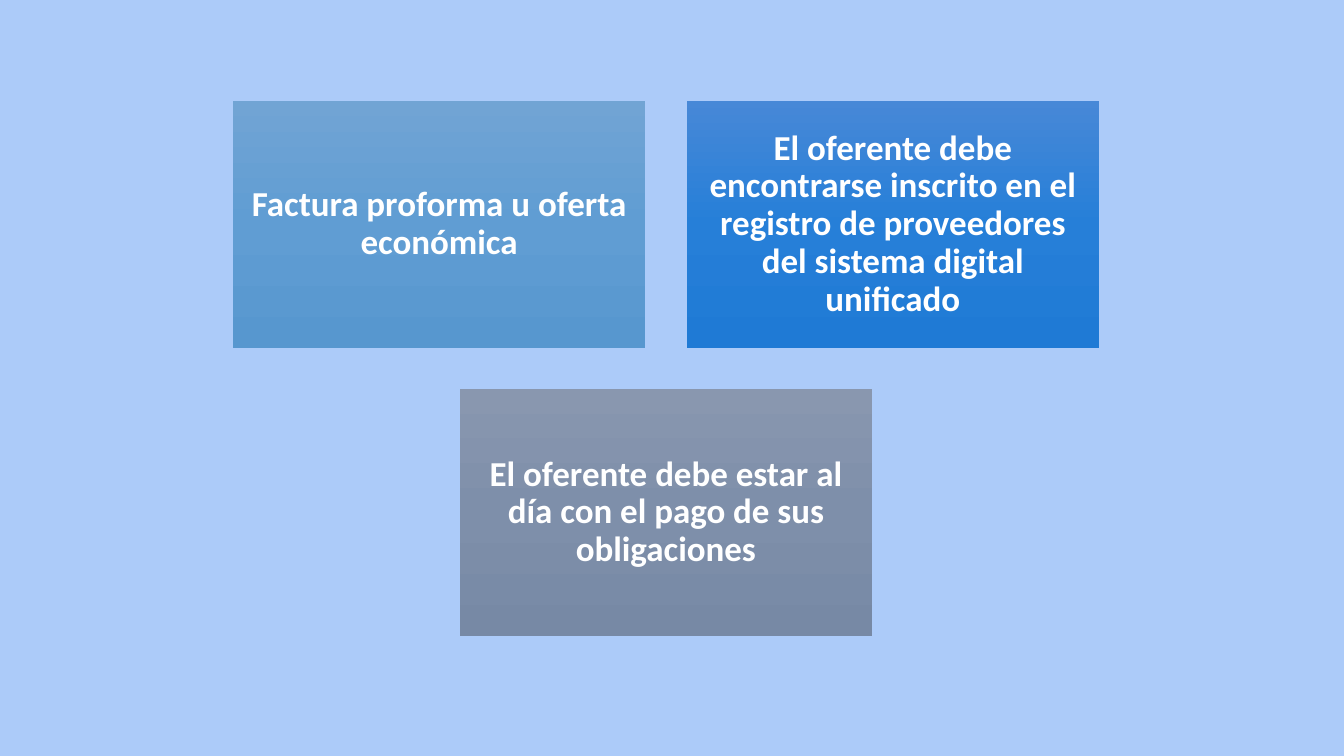
from copy import deepcopy

from pptx import Presentation
from pptx.dml.color import RGBColor
from pptx.enum.shapes import MSO_SHAPE
from pptx.enum.text import MSO_ANCHOR, PP_ALIGN
from pptx.oxml.ns import qn
from pptx.util import Inches, Pt

BACKGROUND = RGBColor(0xAC, 0xCB, 0xF9)
WHITE = RGBColor(0xFF, 0xFF, 0xFF)
LIGHT_BLUE = [RGBColor(0x71, 0xA4, 0xD4), RGBColor(0x60, 0x9D, 0xD3), RGBColor(0x57, 0x97, 0xCF)]
STRONG_BLUE = [RGBColor(0x47, 0x88, 0xD7), RGBColor(0x26, 0x7F, 0xD8), RGBColor(0x1F, 0x7A, 0xD5)]
GRAY_BLUE = [RGBColor(0x89, 0x97, 0xAF), RGBColor(0x7E, 0x8F, 0xAA), RGBColor(0x77, 0x89, 0xA5)]

CARD_WIDTH, CARD_HEIGHT, GAP = 4.09, 2.45, 0.41
LEFT, TOP = 2.31, 1
COLUMN_STEP = CARD_WIDTH + GAP
ROW_STEP = CARD_HEIGHT + GAP

# Column, row, gradient colours, text; the last card is centred below the others
REQUIREMENTS = [
    (0, 0, LIGHT_BLUE, "Factura proforma u oferta económica"),
    (1, 0, STRONG_BLUE, "El oferente debe encontrarse inscrito en el registro de "
                        "proveedores del sistema digital unificado"),
    (0.5, 1, GRAY_BLUE, "El oferente debe estar al día con el pago de sus obligaciones"),
]


def fill_vertical_gradient(shape, colors):
    """Fill the shape from top to bottom with three evenly spaced colours."""
    shape.fill.gradient()
    shape.fill.gradient_angle = 270
    stop_list = shape._element.spPr.find(qn("a:gradFill")).find(qn("a:gsLst"))
    stop_list.insert(1, deepcopy(stop_list[0]))
    for stop, position, color in zip(shape.fill.gradient_stops, (0, 0.5, 1), colors):
        stop.position = position
        stop.color.rgb = color


presentation = Presentation()
presentation.slide_width = Inches(13.33)
presentation.slide_height = Inches(7.5)
slide = presentation.slides.add_slide(presentation.slide_layouts[6])
slide.background.fill.solid()
slide.background.fill.fore_color.rgb = BACKGROUND

for column, row, colors, text in REQUIREMENTS:
    card = slide.shapes.add_shape(
        MSO_SHAPE.RECTANGLE,
        Inches(LEFT + column * COLUMN_STEP), Inches(TOP + row * ROW_STEP),
        Inches(CARD_WIDTH), Inches(CARD_HEIGHT),
    )
    card.shadow.inherit = False
    card.line.fill.background()
    fill_vertical_gradient(card, colors)

    text_frame = card.text_frame
    text_frame.text = text
    text_frame.word_wrap = True
    text_frame.vertical_anchor = MSO_ANCHOR.MIDDLE
    text_frame.margin_left = text_frame.margin_right = Inches(0.1)
    text_frame.margin_top = text_frame.margin_bottom = Inches(0.1)
    paragraph = text_frame.paragraphs[0]
    paragraph.alignment = PP_ALIGN.CENTER
    paragraph.line_spacing = 0.9
    font = paragraph.runs[0].font
    font.name = "Calibri"
    font.size = Pt(25)
    font.bold = True
    font.color.rgb = WHITE

presentation.save("out.pptx")
